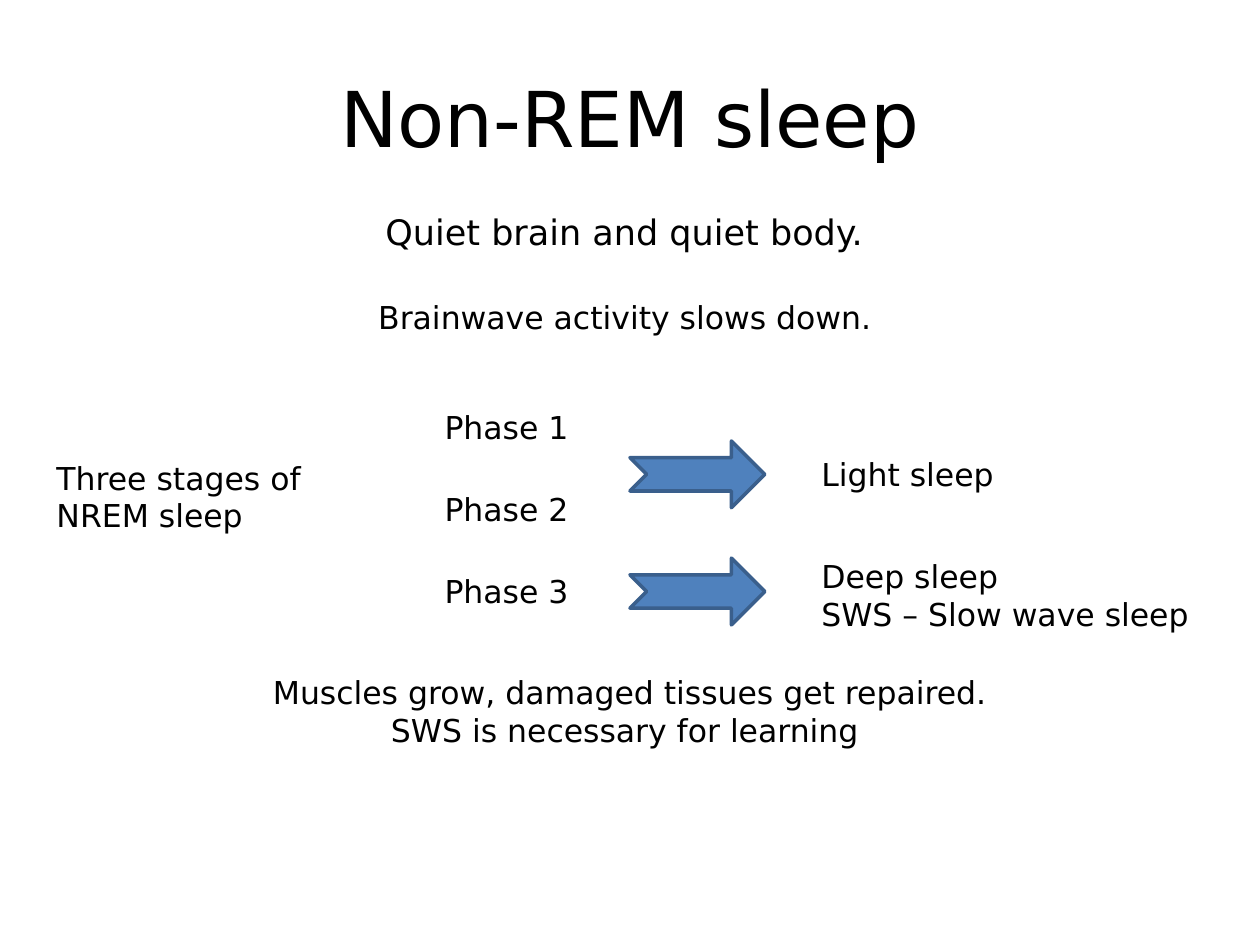
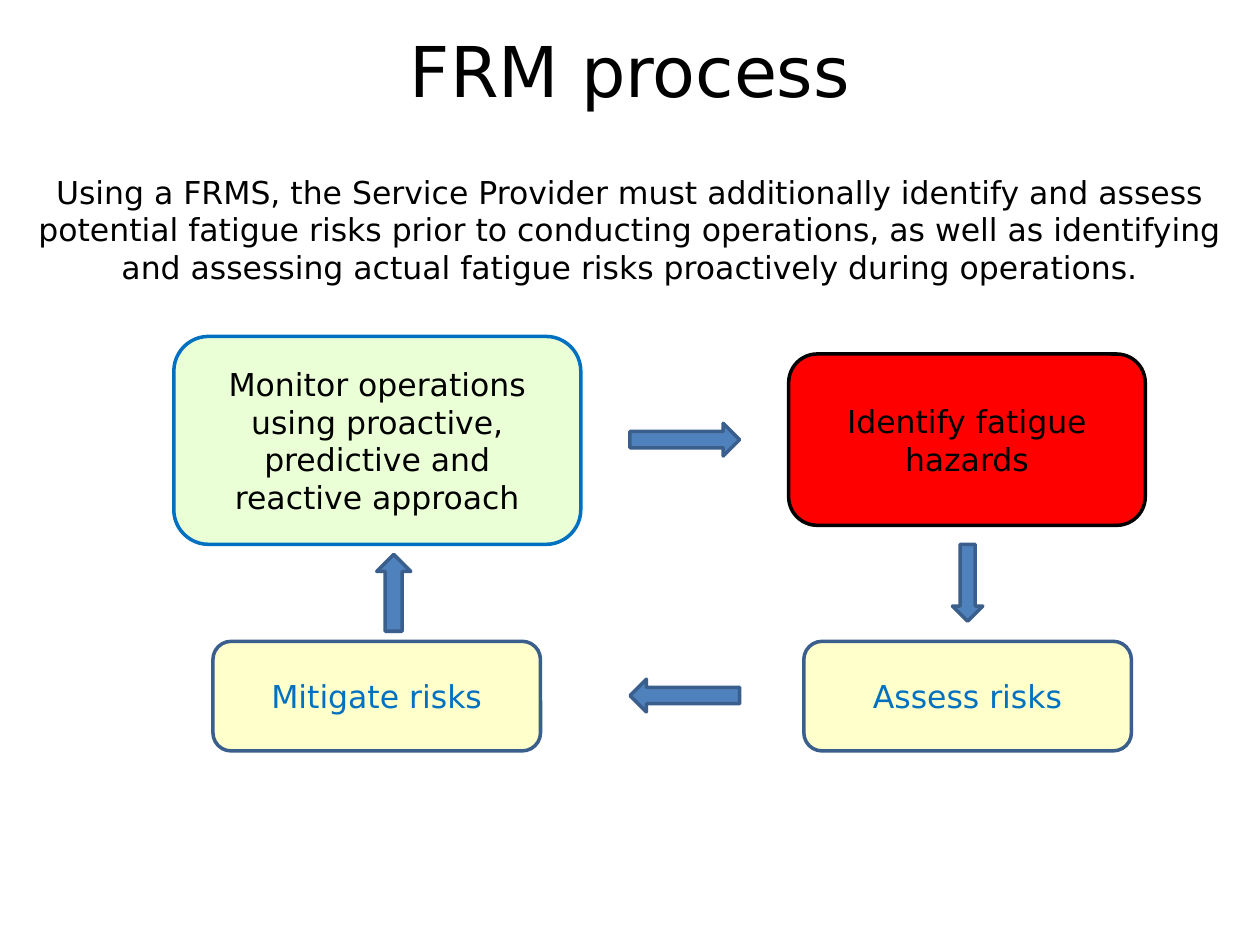
from lxml.etree import SubElement
from pptx import Presentation
from pptx.dml.color import RGBColor
from pptx.enum.shapes import MSO_SHAPE
from pptx.enum.text import MSO_ANCHOR, MSO_AUTO_SIZE, PP_ALIGN
from pptx.oxml.ns import qn
from pptx.util import Inches, Pt


def tint(code):
    return RGBColor.from_string(code)


class Deck:
    face = "DejaVu Sans"
    black, blue = "000000", "0070C0"
    steel, edge = "4F81BD", "3A5F8C"

    def __init__(self):
        self.show = Presentation()
        self.show.slide_width = Inches(10)
        self.show.slide_height = Inches(7.5)
        self.slide = None

    def start(self, title, spot, size):
        self.slide = self.show.slides.add_slide(self.show.slide_layouts[5])
        head = self.slide.shapes.title
        places = zip(("left", "top", "width", "height"), spot)
        for key, value in places:
            setattr(head, key, Inches(value))
        self.label(head, [title], size=size, anchor=MSO_ANCHOR.MIDDLE)

    def label(self, shape, lines, size=18, color=black, align=PP_ALIGN.CENTER,
              anchor=MSO_ANCHOR.TOP, fit=MSO_AUTO_SIZE.NONE):
        frame = shape.text_frame
        frame.text = "\n".join(lines)
        look = {"word_wrap": True, "auto_size": fit, "vertical_anchor": anchor}
        for key, value in look.items():
            setattr(frame, key, value)
        for para in frame.paragraphs:
            para.alignment = align
            for key, value in {"name": self.face, "size": Pt(size)}.items():
                setattr(para.font, key, value)
            para.font.color.rgb = tint(color)

    def text(self, spot, *lines, **style):
        box = self.slide.shapes.add_textbox(*map(Inches, spot))
        self.label(box, lines, fit=MSO_AUTO_SIZE.SHAPE_TO_FIT_TEXT, **style)

    def note(self, spot, *lines):
        self.text(spot, *lines, align=PP_ALIGN.LEFT)

    def shape(self, kind, spot, fill=steel, line=edge, alpha=100, turn=0):
        item = self.slide.shapes.add_shape(kind, *map(Inches, spot))
        item.shadow.inherit = False
        item.rotation = turn
        item.fill.solid()
        item.fill.fore_color.rgb = tint(fill)
        if alpha < 100:
            props = item.element.find(qn("p:spPr"))
            color = props.find(qn("a:solidFill"))[0]
            SubElement(color, qn("a:alpha")).set("val", str(alpha * 1000))
        item.line.color.rgb = tint(line)
        item.line.width = Pt(2)
        return item

    def step(self, spot, words, color=black, **style):
        box = self.shape(MSO_SHAPE.ROUNDED_RECTANGLE, spot, **style)
        self.label(box, [words], color=color, anchor=MSO_ANCHOR.MIDDLE)


def sleep(deck):
    deck.start("Non-REM sleep", (0.5, 0.3, 9, 1.25), 44)
    deck.text((0, 1.62, 10, 0.44), "Quiet brain and quiet body. ", size=20)
    deck.text((-0.04, 2.32, 10, 0.4), "Brainwave activity slows down.")
    deck.note((0.35, 3.59, 2.24, 0.71), "Three stages of NREM sleep")
    for row in range(3):
        deck.note((3.43, 3.19 + 0.65 * row, 1.4, 0.4), f"Phase {row + 1}")
    for top in (3.5, 4.43):
        deck.shape(MSO_SHAPE.NOTCHED_RIGHT_ARROW, (5, top, 1.07, 0.53))
    deck.note((6.42, 3.56, 3.15, 0.4), "Light sleep")
    deck.note((6.42, 4.37, 3.54, 0.71), "Deep sleep", "SWS – Slow wave sleep")
    deck.text((1.98, 5.29, 6.04, 0.71),
              "Muscles grow, damaged tissues get repaired.",
              "SWS is necessary for learning ")


def process(deck):
    deck.start("FRM process", (0, 0.02, 10, 1.06), 40)
    deck.text((0, 1.32, 10, 1.01),
              "Using a FRMS, the Service Provider must additionally identify "
              "and assess potential fatigue risks prior to conducting "
              "operations, as well as identifying and assessing actual "
              "fatigue risks proactively during operations.")
    deck.step((1.38, 2.67, 3.23, 1.65),
              "Monitor operations using proactive, predictive and "
              "reactive approach", fill="CCFF99", line=deck.blue, alpha=39)
    deck.step((6.26, 2.81, 2.83, 1.36), "Identify fatigue hazards",
              fill="FF0000", line=deck.black)
    for left, words in ((6.38, "Assess risks"), (1.69, "Mitigate risks")):
        deck.step((left, 5.09, 2.6, 0.87), words, color=deck.blue,
                  fill="FFFF99", alpha=50)
    for top, turn in ((3.36, 0), (5.39, 180)):
        deck.shape(MSO_SHAPE.RIGHT_ARROW, (5, top, 0.87, 0.26), turn=turn)
    deck.shape(MSO_SHAPE.DOWN_ARROW, (7.56, 4.32, 0.24, 0.61))
    deck.shape(MSO_SHAPE.UP_ARROW, (2.99, 4.4, 0.27, 0.61))


def main():
    deck = Deck()
    sleep(deck)
    process(deck)
    deck.show.save("out.pptx")


if __name__ == "__main__":
    main()
